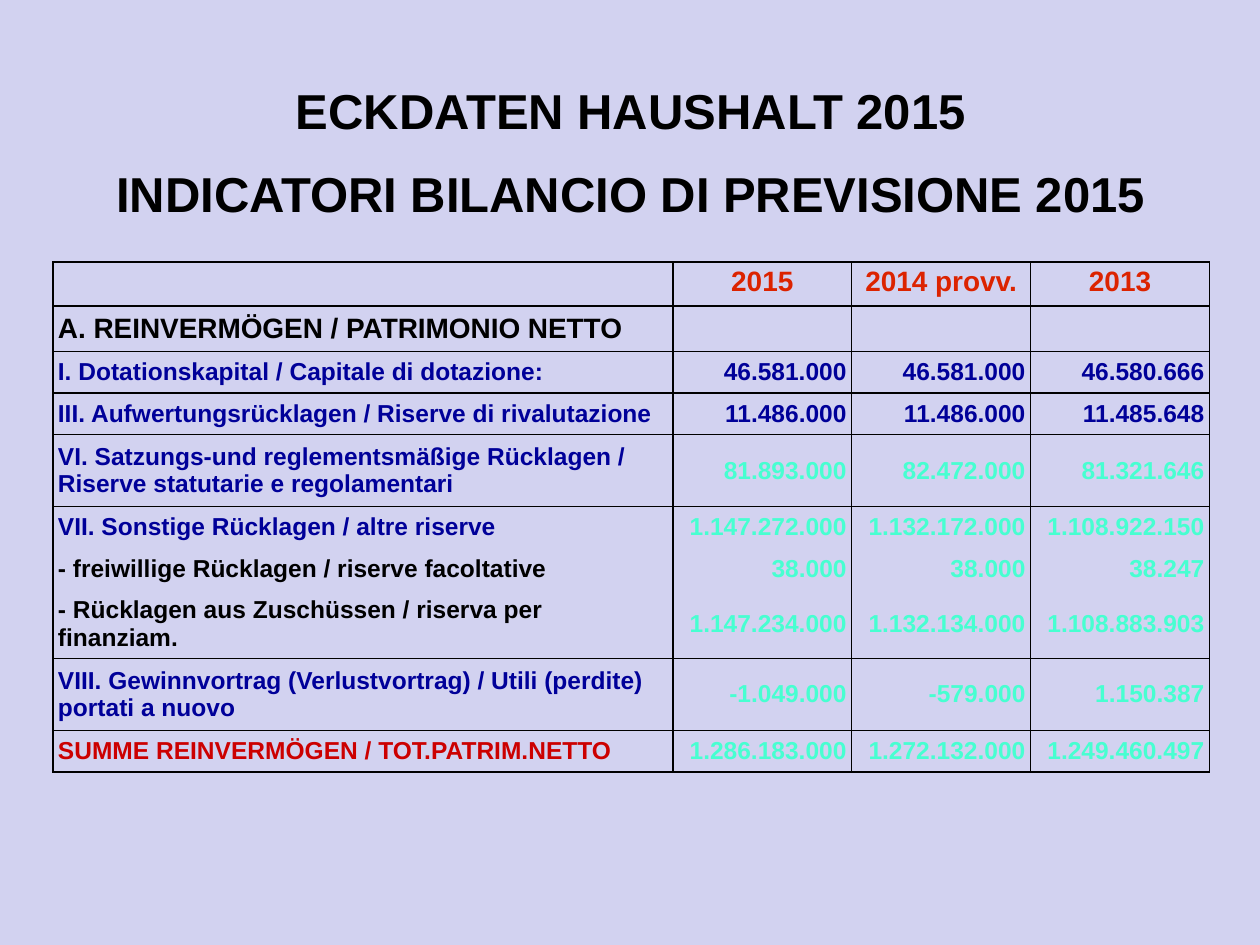
from lxml.etree import SubElement
from pptx import Presentation
from pptx.dml.color import RGBColor as Color
from pptx.enum.text import MSO_ANCHOR as Anchor, PP_ALIGN as Align
from pptx.oxml.ns import qn
from pptx.util import Inches, Pt

THEME = {
    "font": "Arial",
    "background": "D2D2F0",
    "black": "000000",
    "year": "DC2300",
    "item": "000099",
    "total": "CC0000",
    "mint": "47FFD1",
    "title_size": 28,
    "heading_size": 16,
    "body_size": 14,
}

ROWS = [
    ("", "2015", "2014 provv.", "2013", "year", "year", 0.35),
    ("A. REINVERMÖGEN / PATRIMONIO NETTO", "", "", "", "black", "black", 0.36),
    ("I. Dotationskapital / Capitale di dotazione:",
     "46.581.000", "46.581.000", "46.580.666", "item", "item", 0.33),
    ("III. Aufwertungsrücklagen / Riserve di rivalutazione",
     "11.486.000", "11.486.000", "11.485.648", "item", "item", 0.33),
    ("VI. Satzungs-und reglementsmäßige Rücklagen / Riserve statutarie e regolamentari",
     "81.893.000", "82.472.000", "81.321.646", "item", "mint", 0.57),
    ("VII. Sonstige Rücklagen / altre riserve",
     "1.147.272.000", "1.132.172.000", "1.108.922.150", "item", "mint", 0.33),
    ("- freiwillige Rücklagen / riserve facoltative",
     "38.000", "38.000", "38.247", "black", "mint", 0.33),
    ("- Rücklagen aus Zuschüssen / riserva per finanziam.",
     "1.147.234.000", "1.132.134.000", "1.108.883.903", "black", "mint", 0.33),
    ("VIII. Gewinnvortrag (Verlustvortrag) / Utili (perdite) portati a nuovo",
     "-1.049.000", "-579.000", "1.150.387", "item", "mint", 0.57),
    ("SUMME REINVERMÖGEN / TOT.PATRIM.NETTO",
     "1.286.183.000", "1.272.132.000", "1.249.460.497", "total", "mint", 0.33),
]
COLUMN_WIDTHS = [4.92, 1.42, 1.42, 1.42]
OPEN_BELOW = {5, 6}


def style(paragraph, size, color):
    for run in paragraph.runs:
        run.font.name = THEME["font"]
        run.font.size = Pt(size)
        run.font.bold = True
        run.font.color.rgb = Color.from_string(THEME[color])


def draw_borders(cell, hidden):
    properties = cell._tc.get_or_add_tcPr()
    for position, side in enumerate(("lnL", "lnR", "lnT", "lnB")):
        line = SubElement(properties, qn(f"a:{side}"), w=str(Pt(1)))
        if side in hidden:
            SubElement(line, qn("a:noFill"))
        else:
            paint = SubElement(line, qn("a:solidFill"))
            SubElement(paint, qn("a:srgbClr"), val=THEME["black"])
        properties.insert(position, line)


deck = Presentation()
deck.slide_width, deck.slide_height = Inches(10), Inches(7.5)
slide = deck.slides.add_slide(deck.slide_layouts[6])
slide.background.fill.solid()
slide.background.fill.fore_color.rgb = Color.from_string(THEME["background"])

title = slide.shapes.add_textbox(
    Inches(0.78), Inches(0.6), Inches(8.45), Inches(1.21)).text_frame
title.word_wrap = False
title.vertical_anchor = Anchor.BOTTOM
title.text = "ECKDATEN HAUSHALT 2015\nINDICATORI BILANCIO DI PREVISIONE 2015"
for paragraph in title.paragraphs:
    paragraph.alignment = Align.CENTER
    style(paragraph, THEME["title_size"], "black")
title.paragraphs[1].space_before = Pt(13.5)

balance = slide.shapes.add_table(
    len(ROWS), len(COLUMN_WIDTHS), Inches(0.42), Inches(2.08),
    Inches(sum(COLUMN_WIDTHS)), Inches(sum(row[-1] for row in ROWS))).table
balance.first_row = balance.horz_banding = False
for column, width in zip(balance.columns, COLUMN_WIDTHS):
    column.width = Inches(width)

for r, (*texts, label_color, value_color, height) in enumerate(ROWS):
    balance.rows[r].height = Inches(height)
    size = THEME["heading_size" if r < 2 else "body_size"]
    hidden = {side for side, row in (("lnT", r - 1), ("lnB", r)) if row in OPEN_BELOW}
    for c, text in enumerate(texts):
        cell = balance.cell(r, c)
        cell.fill.background()
        cell.vertical_anchor = Anchor.MIDDLE
        cell.margin_left = cell.margin_right = Inches(0.04)
        cell.margin_top = cell.margin_bottom = Inches(0.04)
        draw_borders(cell, hidden)
        paragraph = cell.text_frame.paragraphs[0]
        if not text:
            paragraph._p.get_or_add_endParaRPr().set("sz", str(size * 100))
            continue
        paragraph.text = text
        paragraph.alignment = Align.LEFT if c == 0 else Align.RIGHT
        if r == 0:
            paragraph.alignment = Align.CENTER
            paragraph.line_spacing = 0.81
            paragraph.space_before = Pt(8)
        style(paragraph, size, label_color if c == 0 else value_color)

deck.save("out.pptx")
